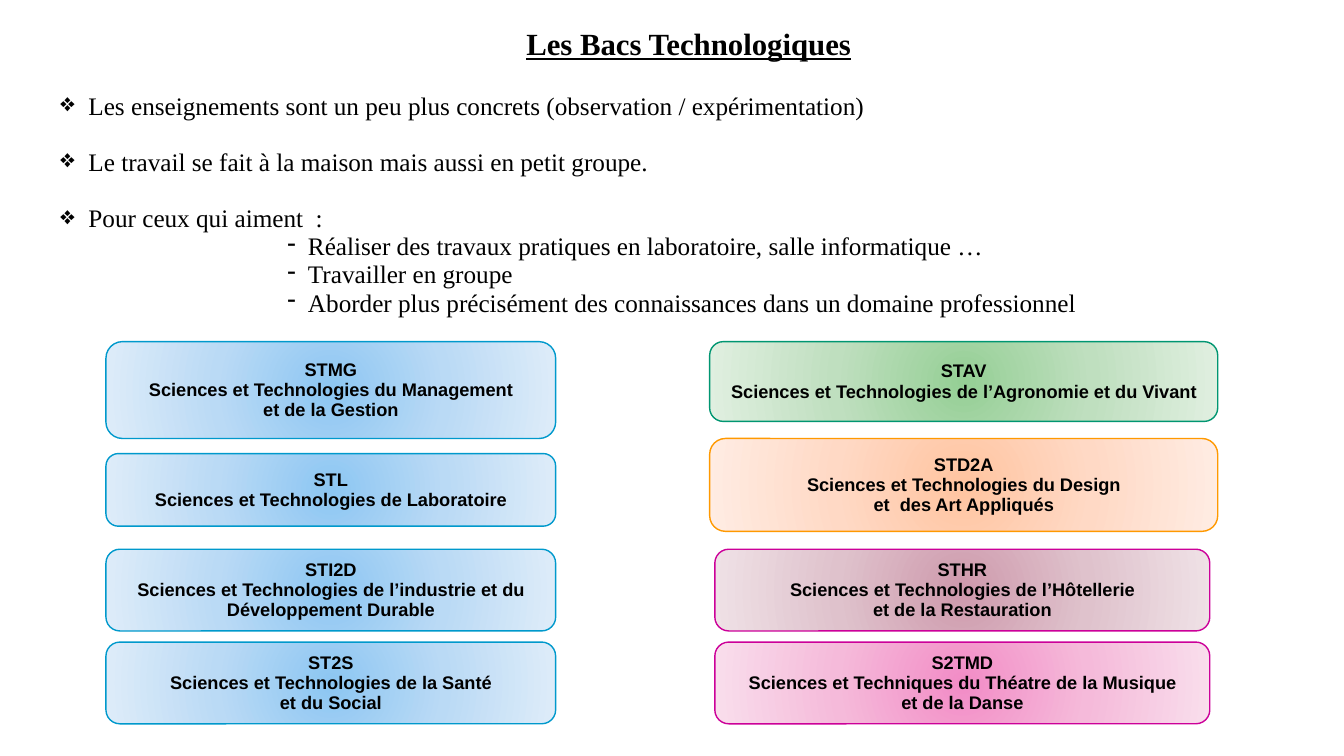
from dataclasses import dataclass

import lxml.etree
import pptx
import pptx.dml.color
import pptx.enum.shapes
import pptx.enum.text
import pptx.oxml.ns
import pptx.shapes.autoshape
import pptx.slide
import pptx.text.text
import pptx.util

Cm = pptx.util.Cm
Pt = pptx.util.Pt
qn = pptx.oxml.ns.qn
ALIGN = pptx.enum.text.PP_ALIGN


@dataclass(frozen=True)
class Tint:
    stops: tuple[str, str, str]  # from the centre to the edge
    border: str


@dataclass(frozen=True)
class Theme:
    serif: str = "Times New Roman"
    sans: str = "Arial"
    ink: str = "000000"
    title_size: int = 22
    body_size: int = 18
    card_size: int = 13
    line_spacing: float = 0.93
    blue: Tint = Tint(("8CC6F2", "BADAF5", "DEECF9"), "0099CC")
    green: Tint = Tint(("95CF95", "BFDFBF", "E0EFE0"), "009671")
    orange: Tint = Tint(("FFC4A0", "FFD9C5", "FFECE3"), "FF9900")
    plum: Tint = Tint(("CE99AC", "DFC2CC", "EFE1E6"), "CC0099")
    pink: Tint = Tint(("F28CC6", "F5BADA", "F9DEEC"), "CC0099")


THEME = Theme()


@dataclass(frozen=True)
class Box:
    left: float
    top: float
    width: float
    height: float

    def lengths(self) -> list[int]:
        return [Cm(v) for v in (self.left, self.top, self.width, self.height)]


@dataclass(frozen=True)
class Bullet:
    char: str
    margin: float
    hanging: float
    space_before: float = 0


@dataclass(frozen=True)
class Card:
    box: Box
    tint: Tint
    lines: tuple[str, ...]


DIAMOND = Bullet("❖", 0.71, 0.71)
SPACED_DIAMOND = Bullet("❖", 0.71, 0.71, space_before=20)
DASH = Bullet("-", 6.24, 0.52)

POINTS = (
    (DIAMOND, "Les enseignements sont un peu plus concrets (observation / expérimentation)"),
    (SPACED_DIAMOND, "Le travail se fait à la maison mais aussi en petit groupe."),
    (SPACED_DIAMOND, "Pour ceux qui aiment  :"),
    (DASH, "Réaliser des travaux pratiques en laboratoire, salle informatique …"),
    (DASH, "Travailler en groupe"),
    (DASH, "Aborder plus précisément des connaissances dans un domaine professionnel"),
)

LEFT_COLUMN = (2.67, 11.33)
WIDE_COLUMN = (17.88, 12.8)
NARROW_COLUMN = (18.01, 12.47)


def card(column: tuple[float, float], top: float, height: float, tint: Tint, *lines: str) -> Card:
    left, width = column
    return Card(Box(left, top, width, height), tint, lines)


CARDS = (
    card(LEFT_COLUMN, 8.61, 2.44, THEME.blue,
         "STMG", "Sciences et Technologies du Management", "et de la Gestion"),
    card(LEFT_COLUMN, 11.43, 1.83, THEME.blue,
         "STL", "Sciences et Technologies de Laboratoire"),
    card(LEFT_COLUMN, 13.84, 2.06, THEME.blue,
         "STI2D", "Sciences et Technologies de l’industrie et du Développement Durable"),
    card(LEFT_COLUMN, 16.18, 2.06, THEME.blue,
         "ST2S", "Sciences et Technologies de la Santé", "et du Social"),
    card(WIDE_COLUMN, 8.61, 2.01, THEME.green,
         "STAV", "Sciences et Technologies de l’Agronomie et du Vivant"),
    card(WIDE_COLUMN, 11.05, 2.34, THEME.orange,
         "STD2A", "Sciences et Technologies du Design", "et  des Art Appliqués"),
    card(NARROW_COLUMN, 13.84, 2.06, THEME.plum,
         "STHR", "Sciences et Technologies de l’Hôtellerie", "et de la Restauration"),
    card(NARROW_COLUMN, 16.18, 2.06, THEME.pink,
         "S2TMD", "Sciences et Techniques du Théatre de la Musique", "et de la Danse"),
)


def write(tf: pptx.text.text.TextFrame, lines: list[str], font: str, size: int,
          align: ALIGN, inset_top: float, bold: bool = False, underline: bool = False) -> None:
    tf.word_wrap = True
    tf.margin_left = tf.margin_right = Cm(0.25)
    tf.margin_top, tf.margin_bottom = Cm(inset_top), Cm(0.13)
    tf.text = "\n".join(lines)
    for p in tf.paragraphs:
        p.alignment = align
        p.line_spacing = THEME.line_spacing
        for r in p.runs:
            r.font.name = font
            r.font.size = Pt(size)
            r.font.bold = bold
            r.font.underline = underline
            r.font.color.rgb = pptx.dml.color.RGBColor.from_string(THEME.ink)


def set_bullet(p: pptx.text.text._Paragraph, bullet: Bullet) -> None:
    p.space_before = Pt(bullet.space_before)
    pPr = p._p.get_or_add_pPr()
    pPr.set("marL", str(Cm(bullet.margin)))
    pPr.set("indent", str(-Cm(bullet.hanging)))
    lxml.etree.SubElement(pPr, qn("a:buChar")).set("char", bullet.char)


def fill_radial(sp: pptx.shapes.autoshape.Shape, stops: tuple[str, ...]) -> None:
    """Fill with evenly spaced colours spreading from the centre."""
    sp.fill.gradient()
    grad = sp._element.spPr.find(qn("a:gradFill"))
    for child in list(grad):
        grad.remove(child)
    stop_list = lxml.etree.SubElement(grad, qn("a:gsLst"))
    for i, color in enumerate(stops):
        gs = lxml.etree.SubElement(stop_list, qn("a:gs"), pos=str(i * 50000))
        lxml.etree.SubElement(gs, qn("a:srgbClr"), val=color)
    circle = lxml.etree.SubElement(grad, qn("a:path"), path="circle")
    lxml.etree.SubElement(circle, qn("a:fillToRect"),
                          {side: "50000" for side in "ltrb"})


def add_title(s: pptx.slide.Slide) -> None:
    sp = s.shapes.add_textbox(*Box(5.21, 0.53, 24.28, 1.12).lengths())
    write(sp.text_frame, ["Les Bacs Technologiques"], THEME.serif, THEME.title_size,
          ALIGN.CENTER, inset_top=0.18, bold=True, underline=True)


def add_points(s: pptx.slide.Slide) -> None:
    sp = s.shapes.add_textbox(*Box(1.27, 2.21, 31.29, 6.71).lengths())
    tf = sp.text_frame
    write(tf, [text for _, text in POINTS], THEME.serif, THEME.body_size,
          ALIGN.JUSTIFY, inset_top=0.13)
    for p, (bullet, _) in zip(tf.paragraphs, POINTS):
        set_bullet(p, bullet)


def add_card(s: pptx.slide.Slide, item: Card) -> None:
    sp = s.shapes.add_shape(pptx.enum.shapes.MSO_SHAPE.ROUNDED_RECTANGLE, *item.box.lengths())
    sp.shadow.inherit = False
    sp.adjustments[0] = 0.17
    fill_radial(sp, item.tint.stops)
    sp.line.color.rgb = pptx.dml.color.RGBColor.from_string(item.tint.border)
    sp.line.width = Pt(1)
    sp.text_frame.vertical_anchor = pptx.enum.text.MSO_ANCHOR.MIDDLE
    write(sp.text_frame, list(item.lines), THEME.sans, THEME.card_size,
          ALIGN.CENTER, inset_top=0.15, bold=True)


def main() -> None:
    prs = pptx.Presentation()
    prs.slide_width, prs.slide_height = Cm(33.86), Cm(19.05)
    s = prs.slides.add_slide(prs.slide_layouts[6])
    add_title(s)
    add_points(s)
    for item in CARDS:
        add_card(s, item)
    prs.save("out.pptx")


if __name__ == "__main__":
    main()
